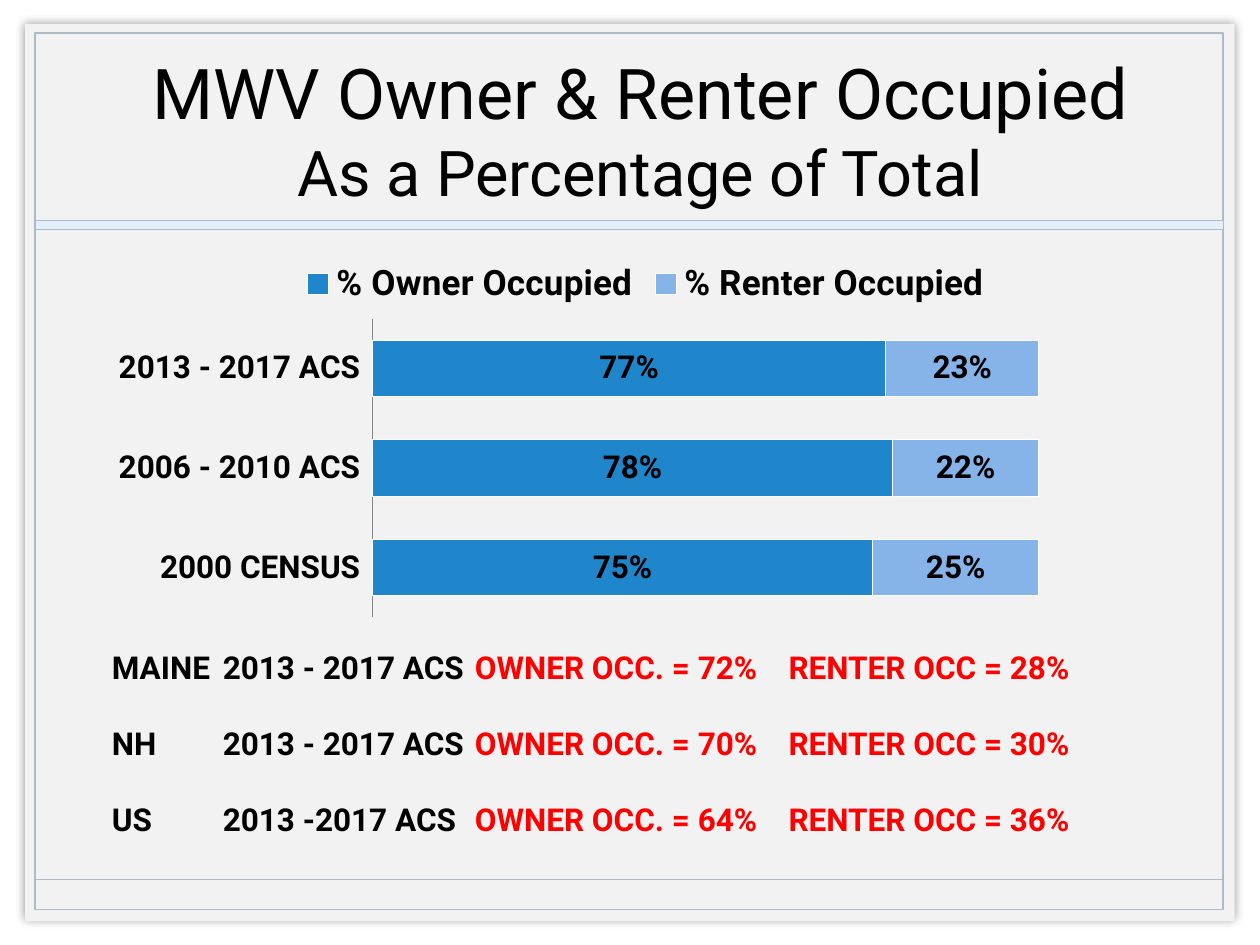
"""Build the slide on owner and renter occupied housing shares."""
from lxml import etree
from pptx import Presentation
from pptx.chart.data import CategoryChartData
from pptx.dml.color import RGBColor
from pptx.enum.chart import XL_CHART_TYPE, XL_LABEL_POSITION, XL_LEGEND_POSITION, XL_TICK_LABEL_POSITION, XL_TICK_MARK
from pptx.enum.shapes import MSO_CONNECTOR, MSO_SHAPE
from pptx.enum.text import MSO_ANCHOR, PP_ALIGN
from pptx.oxml import parse_xml
from pptx.oxml.ns import nsdecls, qn
from pptx.util import Inches, Pt

RECT = MSO_SHAPE.RECTANGLE
STRAIGHT = MSO_CONNECTOR.STRAIGHT
CENTER = PP_ALIGN.CENTER
MIDDLE = MSO_ANCHOR.MIDDLE
BAR_STACKED = XL_CHART_TYPE.BAR_STACKED
LABEL_CENTER = XL_LABEL_POSITION.CENTER
LEGEND_TOP = XL_LEGEND_POSITION.TOP
LABELS_LOW = XL_TICK_LABEL_POSITION.LOW
NO_TICK = XL_TICK_MARK.NONE

FONT = "Roboto"
BLACK = RGBColor(0x00, 0x00, 0x00)
WHITE = RGBColor(0xFF, 0xFF, 0xFF)
RED = RGBColor(0xFF, 0x00, 0x00)
PAPER = RGBColor(0xF2, 0xF2, 0xF2)
FRAME = RGBColor(0xAF, 0xBA, 0xC8)
BAND = RGBColor(0xE4, 0xEF, 0xFC)
AXIS = RGBColor(0x86, 0x86, 0x86)
OWNER = RGBColor(0x1F, 0x86, 0xCB)
RENTER = RGBColor(0x87, 0xB4, 0xE8)

prs = Presentation()
prs.slide_width, prs.slide_height = Inches(10), Inches(7.5)
COL, ROW = prs.slide_width // 100, prs.slide_height // 75
s = prs.slides.add_slide(prs.slide_layouts[6])


def grid(x, y, w, h):
    return round(x * COL), round(y * ROW), round(w * COL), round(h * ROW)


def set_font(font, size, bold, color=BLACK):
    font.name, font.size, font.bold = FONT, Pt(size), bold
    font.color.rgb = color


panels = []
for area, fill, line in [
    ((2, 1.9, 96, 71.2), PAPER, None),
    ((2.8, 2.6, 94.3, 69.6), None, 1),
    ((2.8, 17.5, 94.3, 0.7), BAND, 0.25),
]:
    sp = s.shapes.add_shape(RECT, *grid(*area))
    sp.shadow.inherit = False
    if fill:
        sp.fill.solid()
        sp.fill.fore_color.rgb = fill
    else:
        sp.fill.background()
    if line:
        sp.line.color.rgb, sp.line.width = FRAME, Pt(line)
    else:
        sp.line.fill.background()
    panels.append(sp)

effects = panels[0].element.spPr.find(qn("a:effectLst"))
effects.append(parse_xml(
    f'<a:outerShdw {nsdecls("a")} blurRad="{Pt(5)}" dist="0" dir="0" algn="ctr" rotWithShape="0">'
    '<a:srgbClr val="000000"><a:alpha val="40000"/></a:srgbClr></a:outerShdw>'))

left, top, width, _ = grid(2.8, 69.8, 94.3, 0)
rule = s.shapes.add_connector(STRAIGHT, left, top, left + width, top)
rule.line.color.rgb, rule.line.width = FRAME, Pt(1)
etree.SubElement(rule.element.spPr, qn("a:effectLst"))

tf = s.shapes.add_textbox(*grid(9.7, 3.4, 82.2, 13.8)).text_frame
tf.word_wrap = True
tf.vertical_anchor = MIDDLE
tf.text = "MWV Owner & Renter Occupied\nAs a Percentage of Total"
for p, size in zip(tf.paragraphs, (40, 36)):
    p.alignment = CENTER
    set_font(p.font, size, False)

data = CategoryChartData(number_format="0%")
data.categories = ["2000 CENSUS", "2006 - 2010 ACS", "2013 - 2017 ACS"]
data.add_series("% Owner Occupied", (0.75, 0.78, 0.77))
data.add_series("% Renter Occupied", (0.25, 0.22, 0.23))
chart = s.shapes.add_chart(BAR_STACKED, *grid(7.9, 19.6, 86.7, 30), data).chart
set_font(chart.font, 18, False)
chart.has_title = False
chart.has_legend = True
chart.legend.position = LEGEND_TOP
chart.legend.include_in_layout = False
set_font(chart.legend.font, 20, True)

cat = chart.category_axis
cat.major_tick_mark = cat.minor_tick_mark = NO_TICK
cat.tick_label_position = LABELS_LOW
cat.has_major_gridlines = False
cat.format.line.color.rgb = AXIS
set_font(cat.tick_labels.font, 18, True)
val = chart.value_axis
val.minimum_scale, val.maximum_scale = 0, 1
val.has_major_gridlines = False
val.visible = False

plot = chart.plots[0]
plot.gap_width, plot.overlap = 75, 100
plot.vary_by_categories = False
for series, color in zip(plot.series, (OWNER, RENTER)):
    series.format.fill.solid()
    series.format.fill.fore_color.rgb = color
    series.format.line.color.rgb = WHITE
    labels = series.data_labels
    labels.show_value = True
    labels.number_format, labels.number_format_is_linked = "0%", False
    labels.position = LABEL_CENTER
    set_font(labels.font, 18, True)

area = plot._element.getparent()
for old in area.findall(qn("c:layout")):
    area.remove(old)
area.insert(0, parse_xml(
    f'<c:layout {nsdecls("c")}><c:manualLayout><c:layoutTarget val="inner"/>'
    '<c:xMode val="edge"/><c:yMode val="edge"/><c:x val="0.25"/><c:y val="0.19"/>'
    '<c:w val="0.61"/><c:h val="0.79"/></c:manualLayout></c:layout>'))

tf = s.shapes.add_textbox(*grid(7.9, 50.9, 87.6, 16.2)).text_frame
tf.word_wrap = True
for i, (place, years, owner, renter) in enumerate([
    ("MAINE", "2013 - 2017 ACS", 72, 28),
    ("NH", "2013 - 2017 ACS", 70, 30),
    ("US", "2013 -2017 ACS", 64, 36),
]):
    p = tf.paragraphs[0] if i == 0 else tf.add_paragraph()
    p.space_after = Pt(22)
    set_font(p.font, 18, True)
    for text, color in [
        (f"{place}\t{years}\t", BLACK),
        (f"OWNER OCC. = {owner}%\tRENTER OCC = {renter}%", RED),
    ]:
        r = p.add_run()
        r.text = text
        r.font.color.rgb = color
    tabs = parse_xml(f'<a:tabLst {nsdecls("a")}/>')
    for stop in (8.8, 28.8, 53.7):
        etree.SubElement(tabs, qn("a:tab"), pos=str(round(stop * COL)), algn="l")
    p._p.get_or_add_pPr().find(qn("a:defRPr")).addprevious(tabs)

prs.save("out.pptx")
